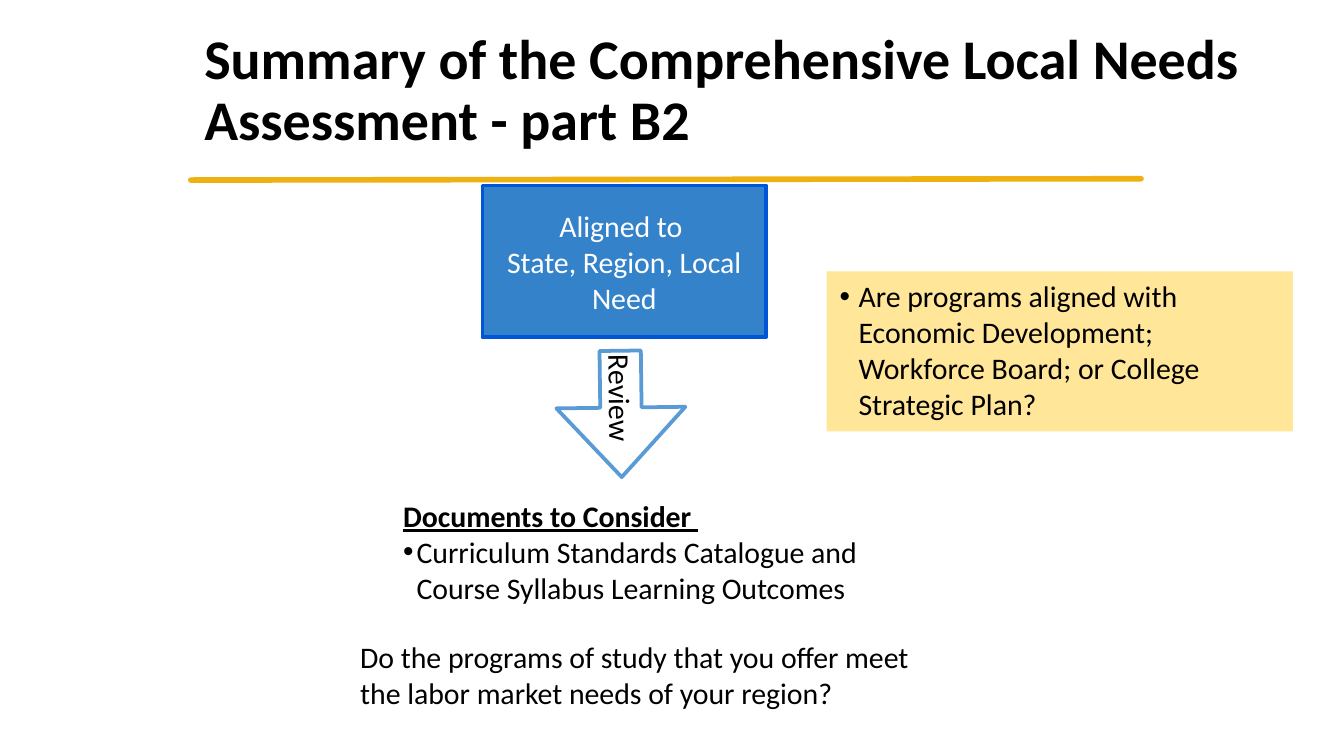
"""Build the slide that summarises part B2 of the local needs assessment."""
from typing import NamedTuple, Optional

from lxml import etree
from pptx import Presentation
from pptx import util as u
from pptx.dml.color import RGBColor
from pptx.enum import shapes, text
from pptx.oxml.ns import qn

COLORS = {
    "rule": "EEB111", "need": "3482C9", "need_edge": "0056D6",
    "question": "FFE699", "arrow_edge": "5B9BD5",
    "light": "FFFFFF", "dark": "000000",
}
BODY_FONT = {"name": "Calibri", "size": u.Pt(16)}
TITLE_FONT = {"name": "Calibri", "size": u.Pt(30), "bold": True}
HEADING_FONT = {**BODY_FONT, "bold": True, "underline": True}
TIGHT_FRAME = {
    "word_wrap": True, "vertical_anchor": text.MSO_ANCHOR.MIDDLE,
    "margin_left": u.Inches(0.03), "margin_right": u.Inches(0.03),
    "margin_top": u.Inches(0.03), "margin_bottom": u.Inches(0.03),
}
GROWING_FRAME = {**TIGHT_FRAME, "auto_size": text.MSO_AUTO_SIZE.SHAPE_TO_FIT_TEXT}
QUESTION_FRAME = {
    "word_wrap": True, "vertical_anchor": text.MSO_ANCHOR.TOP,
    "auto_size": text.MSO_AUTO_SIZE.SHAPE_TO_FIT_TEXT,
}


class Line(NamedTuple):
    words: str
    font: dict = BODY_FONT
    indent: float = 0


class Box(NamedTuple):
    left: float
    top: float
    width: float
    height: float
    lines: list[Line]
    frame: dict = TIGHT_FRAME
    preset: Optional[shapes.MSO_SHAPE] = None
    fill: str = "light"
    edge: Optional[str] = None
    ink: str = "dark"
    align: text.PP_ALIGN = text.PP_ALIGN.LEFT
    rotation: float = 0
    adjustments: tuple = ()


BOXES = [
    Box(3.59, 1.38, 2.11, 1.13,
        [Line("Aligned to "), Line("State, Region, Local"), Line("Need")],
        preset=shapes.MSO_SHAPE.RECTANGLE, fill="need", edge="need_edge",
        ink="light", align=text.PP_ALIGN.CENTER),
    Box(2.97, 3.67, 3.77, 0.87,
        [Line("Documents to Consider ", HEADING_FONT),
         Line("Curriculum Standards Catalogue and Course Syllabus Learning Outcomes",
              indent=0.1)],
        GROWING_FRAME),
    Box(2.65, 4.72, 4.49, 0.6,
        [Line("Do the programs of study that you offer meet the labor market "
              "needs of your region?")],
        GROWING_FRAME),
    Box(6.15, 2.02, 3.47, 1.19,
        [Line("Are programs aligned with Economic Development; Workforce Board; "
              "or College Strategic Plan?", indent=0.14)],
        QUESTION_FRAME, shapes.MSO_SHAPE.RECTANGLE, "question"),
    Box(4.15, 2.6, 0.94, 0.96, [Line("Review")],
        preset=shapes.MSO_SHAPE.RIGHT_ARROW, edge="arrow_edge",
        rotation=89.3, adjustments=(0.32, 0.55)),
]


def rgb(name: str) -> RGBColor:
    return RGBColor.from_string(COLORS[name])


def apply(target, values: dict) -> None:
    for name, value in values.items():
        setattr(target, name, value)


def add_bullet(paragraph, indent: float) -> None:
    properties = paragraph._p.get_or_add_pPr()
    properties.set("marL", str(u.Inches(indent)))
    properties.set("indent", str(-u.Inches(indent)))
    etree.SubElement(properties, qn("a:buFont"), typeface="Arial")
    etree.SubElement(properties, qn("a:buChar"), char="•")


def write_lines(frame, lines: list[Line], ink: str, align: text.PP_ALIGN) -> None:
    for index, line in enumerate(lines):
        paragraph = frame.add_paragraph() if index else frame.paragraphs[0]
        paragraph.alignment = align
        if line.indent:
            add_bullet(paragraph, line.indent)
        run = paragraph.add_run()
        run.text = line.words
        apply(run.font, line.font)
        run.font.color.rgb = rgb(ink)


def add_box(slide, box: Box) -> None:
    place = [u.Inches(length) for length in box[:4]]
    if box.preset is None:
        shape = slide.shapes.add_textbox(*place)
    else:
        shape = slide.shapes.add_shape(box.preset, *place)
        shape.shadow.inherit = False
        shape.rotation = box.rotation
        for index, value in enumerate(box.adjustments):
            shape.adjustments[index] = value
        shape.fill.solid()
        shape.fill.fore_color.rgb = rgb(box.fill)
        if box.edge:
            shape.line.color.rgb = rgb(box.edge)
            shape.line.width = u.Pt(2)
        else:
            shape.line.fill.background()
    apply(shape.text_frame, box.frame)
    write_lines(shape.text_frame, box.lines, box.ink, box.align)


def add_title(slide) -> None:
    title = slide.shapes.title
    apply(title, {"left": u.Inches(1.42), "top": u.Inches(0.14),
                  "width": u.Inches(8.05), "height": u.Inches(1.09)})
    apply(title.text_frame, {"word_wrap": True, "auto_size": text.MSO_AUTO_SIZE.NONE,
                             "vertical_anchor": text.MSO_ANCHOR.MIDDLE})
    words = "Summary of the Comprehensive Local Needs Assessment - part B2"
    write_lines(title.text_frame, [Line(words, TITLE_FONT)], "dark", text.PP_ALIGN.LEFT)
    title.text_frame.paragraphs[0].line_spacing = 0.9


def add_rule(slide) -> None:
    rule = slide.shapes.add_connector(
        shapes.MSO_CONNECTOR.STRAIGHT,
        u.Inches(1.42), u.Inches(1.34), u.Inches(8.49), u.Inches(1.33))
    rule.line.color.rgb = rgb("rule")
    rule.line.width = u.Pt(3)
    rule.line._get_or_add_ln().set("cap", "rnd")
    etree.SubElement(rule._element.spPr, qn("a:effectLst"))


def main() -> None:
    presentation = Presentation()
    presentation.slide_width = u.Inches(10)
    presentation.slide_height = u.Inches(10 * 9 / 16)
    slide = presentation.slides.add_slide(presentation.slide_layouts[5])
    add_title(slide)
    add_rule(slide)
    for box in BOXES:
        add_box(slide, box)
    presentation.save("out.pptx")


if __name__ == "__main__":
    main()
